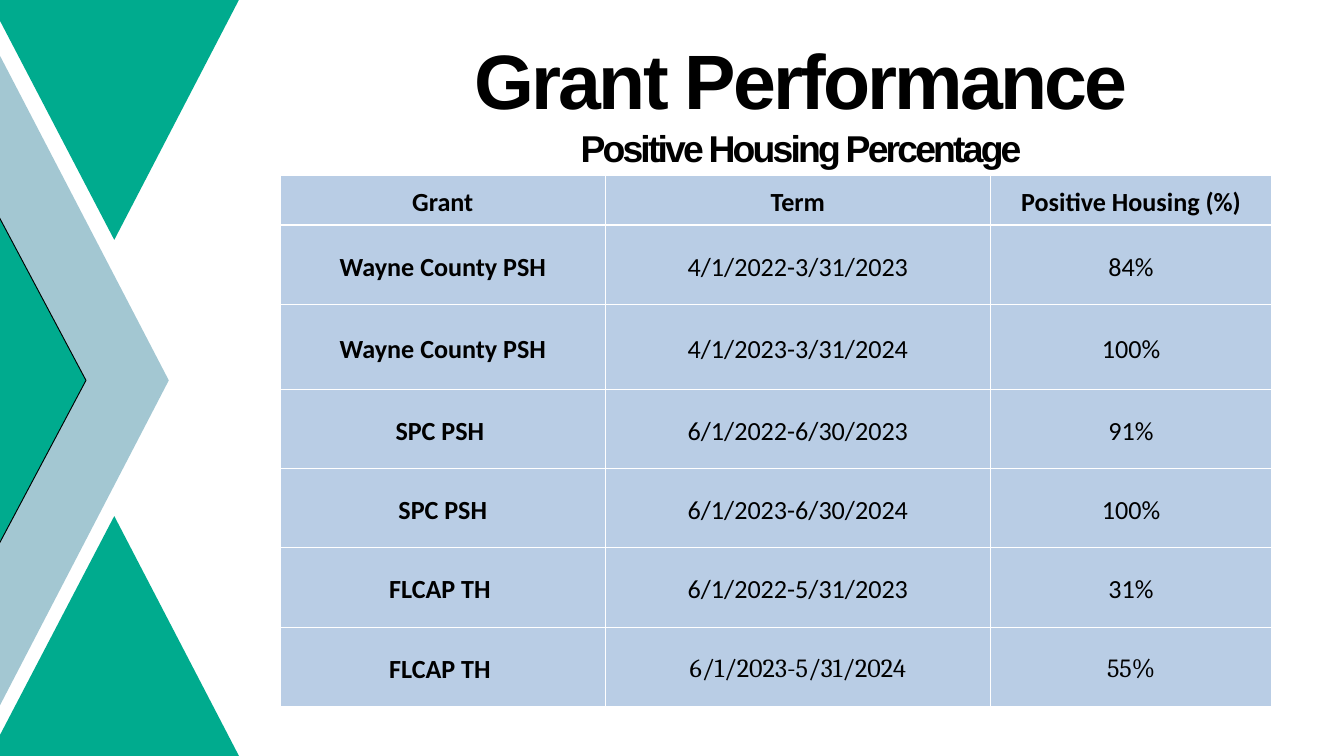
from dataclasses import dataclass

import pptx
import pptx.dml.color
import pptx.enum.text
import pptx.oxml
import pptx.oxml.ns
import pptx.util
from pptx.util import Cm


@dataclass(frozen=True)
class Theme:
    green: str = "00AB8E"
    mist: str = "A3C7D2"
    cell: str = "B9CDE5"
    border: str = "FFFFFF"
    ink: str = "000000"
    title_font: str = "Arial"
    table_font: str = "Calibri"
    last_row_font: str = "Cambria"
    title_size: float = 82.6
    subtitle_size: float = 40
    table_size: float = 28
    title_leading: float = 99.1
    letter_spacing: float = -3


THEME = Theme()
COLUMN_WIDTHS = (12.29, 14.55, 10.64)
ROW_HEIGHTS = (1.88, 3, 3.2, 3, 3, 3, 3)
ROWS = (
    ("Grant", "Term", "Positive Housing (%)"),
    ("Wayne County PSH", "4/1/2022-3/31/2023", "84%"),
    ("Wayne County PSH", "4/1/2023-3/31/2024", "100%"),
    ("SPC PSH ", "6/1/2022-6/30/2023", "91%"),
    ("SPC PSH", "6/1/2023-6/30/2024", "100%"),
    ("FLCAP TH ", "6/1/2022-5/31/2023", "31%"),
    ("FLCAP TH ", "6/1/2023-5/31/2024", "55%"),
)


def color(value):
    return pptx.dml.color.RGBColor.from_string(value)


def add_polygon(slide, points, fill, line=None):
    corners = [(Cm(x), Cm(y)) for x, y in points]
    builder = slide.shapes.build_freeform(*corners[0])
    builder.add_line_segments(corners[1:], close=True)
    shape = builder.convert_to_shape()
    shape.shadow.inherit = False
    shape.fill.solid()
    shape.fill.fore_color.rgb = color(fill)
    if line:
        shape.line.color.rgb = color(line)
        shape.line.width = pptx.util.Pt(1)
    else:
        shape.line.fill.background()


def add_hexagon(slide, xs, ys, fill, line=None):
    left, inner_left, inner_right, right = xs
    top, middle, bottom = ys
    points = ((right, middle), (inner_right, bottom), (inner_left, bottom),
              (left, middle), (inner_left, top), (inner_right, top))
    add_polygon(slide, points, fill, line)


def add_triangle(slide, apex_y, base_y):
    points = ((4.32, apex_y), (11.05, base_y), (-2.44, base_y))
    add_polygon(slide, points, THEME.green)


def add_run(paragraph, text, font, size, bold):
    paragraph.alignment = pptx.enum.text.PP_ALIGN.CENTER
    run = paragraph.add_run()
    run.text = text
    run.font.name = font
    run.font.size = pptx.util.Pt(size)
    run.font.bold = bold
    run.font.color.rgb = color(THEME.ink)
    return run


def add_heading(slide):
    box = slide.shapes.add_textbox(Cm(8.31), Cm(1.22), Cm(43.94), Cm(5.23))
    frame = box.text_frame
    frame.word_wrap = True
    frame.margin_left = frame.margin_right = 0
    frame.margin_top = frame.margin_bottom = 0
    title = frame.paragraphs[0]
    title.line_spacing = pptx.util.Pt(THEME.title_leading)
    lines = (
        (title, "Grant Performance", THEME.title_size),
        (frame.add_paragraph(), "Positive Housing Percentage", THEME.subtitle_size),
    )
    for paragraph, text, size in lines:
        run = add_run(paragraph, text, THEME.title_font, size, True)
        run.font._element.set("spc", str(int(THEME.letter_spacing * 100)))


def set_borders(cell, widths):
    properties = cell._tc.get_or_add_tcPr()
    for side, width in zip("LRTB", widths):
        properties.append(pptx.oxml.parse_xml(
            f'<a:ln{side} {pptx.oxml.ns.nsdecls("a")} w="{pptx.util.Pt(width)}">'
            f'<a:solidFill><a:srgbClr val="{THEME.border}"/></a:solidFill>'
            f'</a:ln{side}>'))


def fill_cell(cell, text, font, bold, border_widths):
    set_borders(cell, border_widths)
    cell.fill.solid()
    cell.fill.fore_color.rgb = color(THEME.cell)
    cell.vertical_anchor = pptx.enum.text.MSO_ANCHOR.MIDDLE
    cell.margin_left = cell.margin_right = Cm(0.18)
    cell.margin_top = cell.margin_bottom = 0
    paragraph = cell.text_frame.paragraphs[0]
    paragraph.line_spacing = 1.15
    paragraph.space_after = pptx.util.Pt(10)
    add_run(paragraph, text, font, THEME.table_size, bold)


def add_grant_table(slide):
    table = slide.shapes.add_table(
        len(ROWS), len(COLUMN_WIDTHS), Cm(10.59), Cm(6.63),
        Cm(sum(COLUMN_WIDTHS)), Cm(sum(ROW_HEIGHTS))).table
    table.horz_banding = False
    for column, width in zip(table.columns, COLUMN_WIDTHS):
        column.width = Cm(width)
    for row, height in zip(table.rows, ROW_HEIGHTS):
        row.height = Cm(height)
    last = len(ROWS) - 1
    for row_index, texts in enumerate(ROWS):
        top = 3 if row_index == 1 else 1
        bottom = 3 if row_index == 0 else 1
        for column_index, text in enumerate(texts):
            bold = row_index == 0 or column_index == 0
            serif = row_index == last and column_index > 0
            font = THEME.last_row_font if serif else THEME.table_font
            fill_cell(table.cell(row_index, column_index), text, font, bold,
                      (1, 1, top, bottom))


def main():
    presentation = pptx.Presentation()
    presentation.slide_width = Cm(50.8)
    presentation.slide_height = Cm(28.58)
    slide = presentation.slides.add_slide(presentation.slide_layouts[6])
    add_hexagon(slide, (-27.38, -18.42, -2.59, 6.38), (-2.87, 14.38, 31.65),
                THEME.mist)
    add_hexagon(slide, (-29.87, -21.59, -5.03, 3.25), (-1.19, 14.38, 29.97),
                THEME.green, THEME.ink)
    add_triangle(slide, 9.07, -3.89)
    add_triangle(slide, 19.51, 32.46)
    add_grant_table(slide)
    add_heading(slide)
    presentation.save("out.pptx")


if __name__ == "__main__":
    main()
